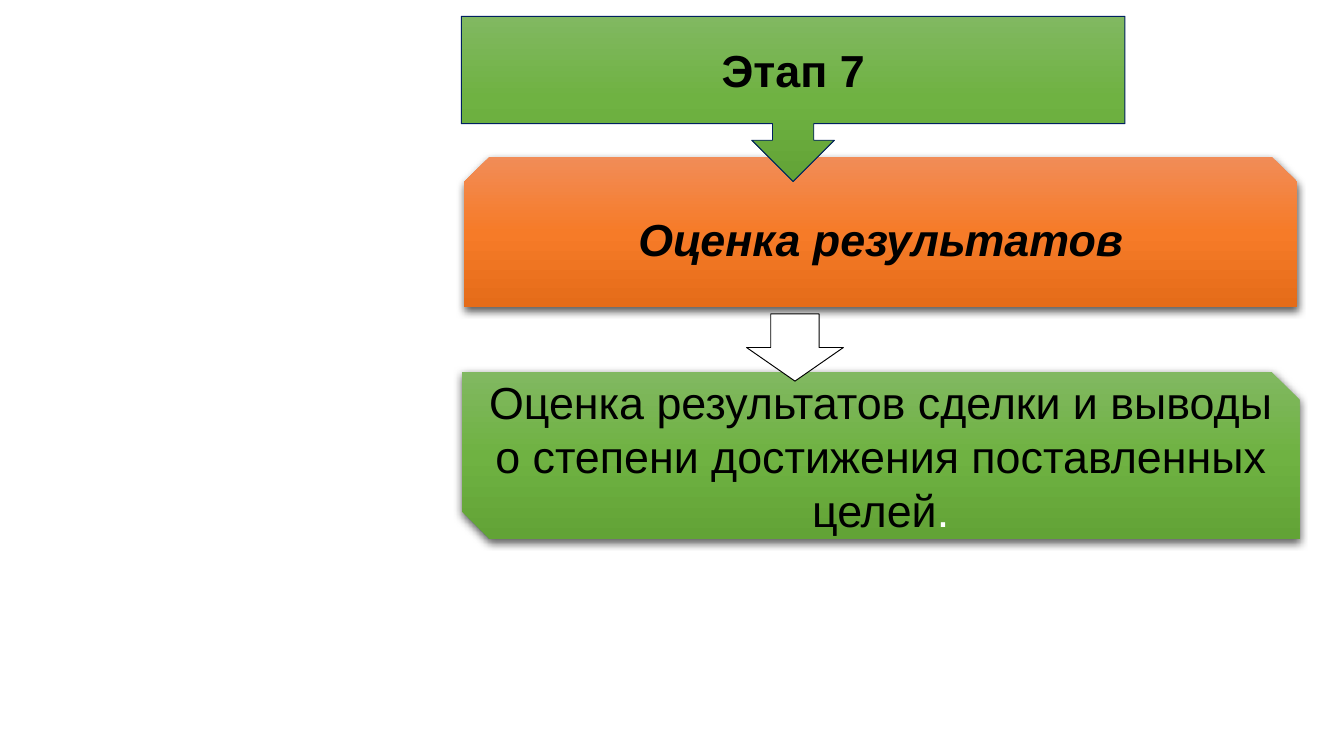
from copy import deepcopy

from pptx import Presentation
from pptx.dml.color import RGBColor
from pptx.enum.shapes import MSO_SHAPE
from pptx.enum.text import MSO_ANCHOR, PP_ALIGN
from pptx.oxml import parse_xml
from pptx.oxml.ns import nsdecls, qn
from pptx.util import Cm, Pt

BLACK = RGBColor(0x00, 0x00, 0x00)
WHITE = RGBColor(0xFF, 0xFF, 0xFF)
NAVY = RGBColor(0x00, 0x20, 0x60)
GREENS = [RGBColor(0x81, 0xB8, 0x61), RGBColor(0x6F, 0xB2, 0x42), RGBColor(0x62, 0xA3, 0x36)]
ORANGES = [RGBColor(0xF1, 0x8C, 0x57), RGBColor(0xF6, 0x7B, 0x28), RGBColor(0xE5, 0x6C, 0x19)]

SHADOW = (
    f'<a:outerShdw {nsdecls("a")} blurRad="57150" dist="19050" dir="5400000" '
    'algn="ctr" rotWithShape="0"><a:srgbClr val="000000"><a:alpha val="63000"/>'
    "</a:srgbClr></a:outerShdw>"
)


def fill_gradient(shape, colors):
    shape.fill.gradient()
    shape.fill.gradient_angle = 270
    stop_list = shape._element.spPr.find(qn("a:gradFill")).find(qn("a:gsLst"))
    stop_list.append(deepcopy(stop_list[-1]))
    for stop, color, position in zip(shape.fill.gradient_stops, colors, (0, 0.5, 1)):
        stop.color.rgb = color
        stop.position = position


deck = Presentation()
deck.slide_width, deck.slide_height = Cm(25.4), Cm(14.28)
page = deck.slides.add_slide(deck.slide_layouts[6])

steps = [
    {
        "kind": MSO_SHAPE.SNIP_2_SAME_RECTANGLE, "place": (8.77, 2.97, 15.75, 2.83),
        "colors": ORANGES, "line": None,
        "spans": [("Оценка результатов", BLACK)], "format": {"bold": True, "italic": True},
    },
    {
        "kind": MSO_SHAPE.DOWN_ARROW_CALLOUT, "place": (8.72, 0.31, 12.54, 3.12),
        "colors": GREENS, "line": NAVY,
        "spans": [("Этап 7", BLACK)], "format": {"bold": True},
    },
    {
        "kind": MSO_SHAPE.SNIP_2_DIAG_RECTANGLE, "place": (8.73, 7.03, 15.83, 3.15),
        "colors": GREENS, "line": None,
        "spans": [
            ("Оценка результатов сделки и выводы о степени достижения поставленных целей", BLACK),
            (".", WHITE),
        ],
        "format": {},
    },
    {
        "kind": MSO_SHAPE.DOWN_ARROW, "place": (14.11, 5.93, 1.83, 1.27),
        "colors": None, "line": BLACK, "spans": [], "format": {},
    },
]

for step in steps:
    shape = page.shapes.add_shape(step["kind"], *[Cm(length) for length in step["place"]])
    shape.shadow.inherit = False
    if step["colors"]:
        fill_gradient(shape, step["colors"])
    else:
        shape.fill.solid()
        shape.fill.fore_color.rgb = WHITE
    if step["line"] is None:
        shape.line.fill.background()
        shape._element.spPr.find(qn("a:effectLst")).append(parse_xml(SHADOW))
    else:
        shape.line.color.rgb = step["line"]
        shape.line.width = Pt(0.5)

    frame = shape.text_frame
    frame.word_wrap = True
    frame.margin_left = frame.margin_right = Cm(0.19)
    frame.margin_top = frame.margin_bottom = Cm(0.1)
    frame.vertical_anchor = MSO_ANCHOR.MIDDLE
    para = frame.paragraphs[0]
    para.alignment = PP_ALIGN.CENTER
    for text, color in step["spans"]:
        span = para.add_run()
        span.text = text
        span.font.color.rgb = color
        for name, value in {"name": "Arial", "size": Pt(24), **step["format"]}.items():
            setattr(span.font, name, value)

deck.save("out.pptx")
